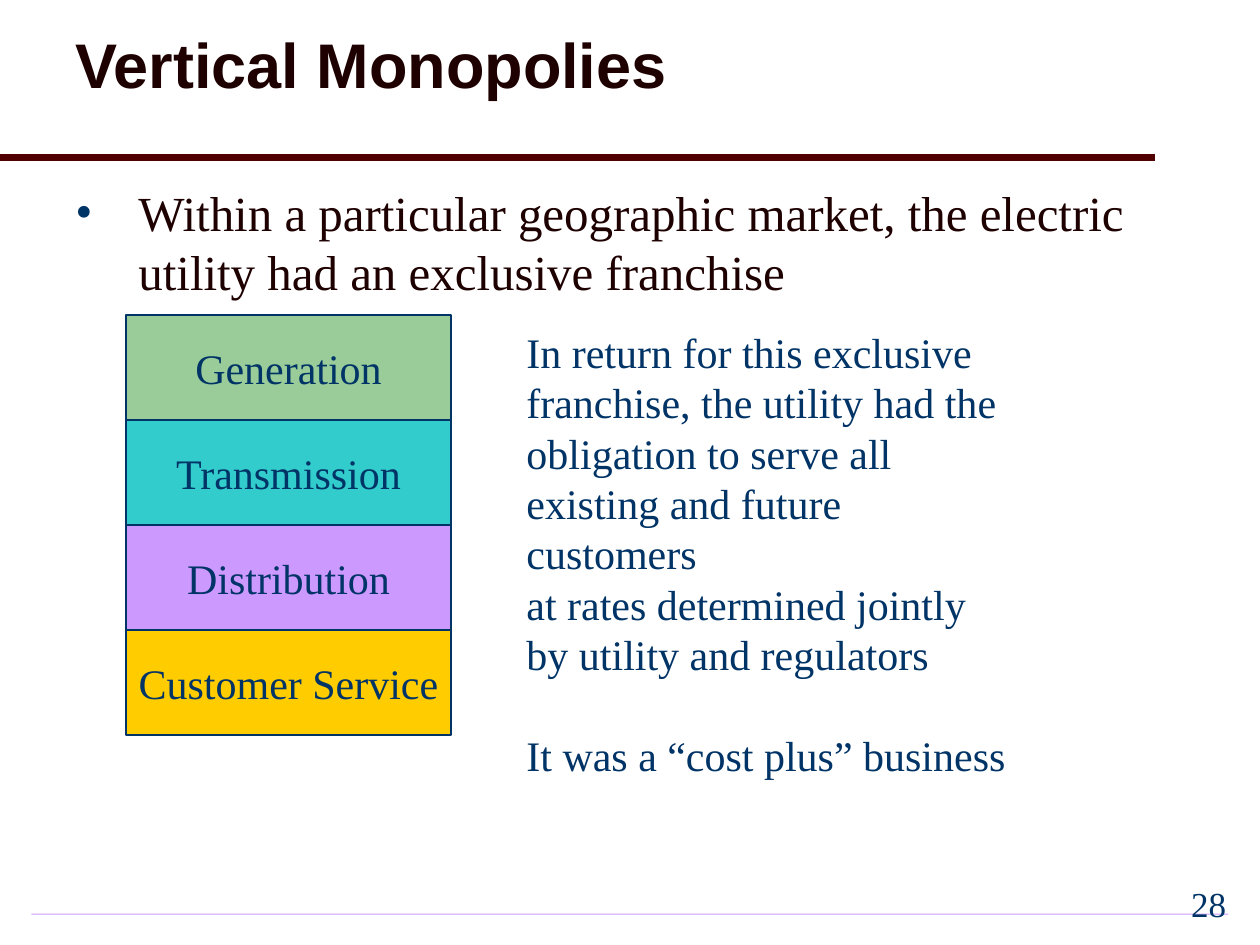
from lxml.etree import SubElement
from pptx import Presentation
from pptx.dml.color import RGBColor
from pptx.enum.shapes import MSO_CONNECTOR, MSO_SHAPE
from pptx.enum.text import MSO_ANCHOR, MSO_AUTO_SIZE, PP_ALIGN
from pptx.oxml.ns import qn
from pptx.util import Inches, Pt

NAVY = RGBColor(0x00, 0x33, 0x66)
DARK = RGBColor(0x1E, 0x00, 0x00)
MAROON = RGBColor(0x50, 0x00, 0x00)
GREEN = RGBColor(0x99, 0xCC, 0x99)
TEAL = RGBColor(0x33, 0xCC, 0xCC)
LILAC = RGBColor(0xCC, 0x99, 0xFF)
GOLD = RGBColor(0xFF, 0xCC, 0x00)

STAGES = [("Generation", GREEN), ("Transmission", TEAL),
          ("Distribution", LILAC), ("Customer Service", GOLD)]
DUTY = ["In return for this exclusive", "franchise, the utility had the",
        "obligation to serve all", "existing and future customers",
        "at rates determined jointly", "by utility and regulators"]
COST = "It was a “cost plus” business"


def write(frame, lines, size=24, color=NAVY, font="Times New Roman", bold=False,
          align=PP_ALIGN.LEFT, anchor=MSO_ANCHOR.TOP, wrap=False, bullet=False):
    """Fill the frame with one paragraph per line and return the last one."""
    frame.word_wrap = wrap
    frame.vertical_anchor = anchor
    for i, line in enumerate(lines):
        para = frame.add_paragraph() if i else frame.paragraphs[0]
        if bullet:
            mark(para)
        para.alignment = align
        run = para.add_run()
        run.text = line
        run.font.name, run.font.size, run.font.bold = font, Pt(size), bold
        run.font.color.rgb = color
    return para


def mark(para):
    """Give the paragraph a navy bullet with a hanging indent."""
    props = para._p.get_or_add_pPr()
    props.set("marL", str(Inches(0.5)))
    props.set("indent", str(-Inches(0.5)))
    SubElement(SubElement(props, qn("a:buClr")), qn("a:srgbClr"), val=str(NAVY))
    SubElement(props, qn("a:buFont"), typeface="Times New Roman")
    SubElement(props, qn("a:buChar"), char="•")


class Page:
    def __init__(self, deck):
        self.slide = deck.slides.add_slide(deck.slide_layouts[6])
        self.shapes = self.slide.shapes

    def text(self, x, y, w, h, lines, **style):
        frame = self.shapes.add_textbox(
            Inches(x), Inches(y), Inches(w), Inches(h)).text_frame
        write(frame, lines, **style)
        return frame

    def rect(self, x, y, w, h, fill, edge=None, group=None):
        shapes = group.shapes if group else self.shapes
        box = shapes.add_shape(MSO_SHAPE.RECTANGLE,
                               Inches(x), Inches(y), Inches(w), Inches(h))
        box.shadow.inherit = False
        box.fill.solid()
        box.fill.fore_color.rgb = fill
        if edge:
            box.line.color.rgb = edge
            box.line.width = Pt(0.75)
        else:
            box.line.fill.background()
        return box

    def rule(self, x, y, end, color, width):
        line = self.shapes.add_connector(MSO_CONNECTOR.STRAIGHT, Inches(x),
                                         Inches(y), Inches(end), Inches(y))
        line.line.color.rgb = color
        line.line.width = Pt(width)
        SubElement(line._element.spPr, qn("a:effectLst"))

    def stack(self, x, y, w, h, items):
        """Pile labelled boxes of height h from y downwards."""
        group = self.shapes.add_group_shape()
        for i, (label, fill) in enumerate(items):
            box = self.rect(x, y + i * h, w, h, fill, NAVY, group)
            write(box.text_frame, [label], align=PP_ALIGN.CENTER,
                  anchor=MSO_ANCHOR.MIDDLE)


def main():
    deck = Presentation()
    deck.slide_width, deck.slide_height = Inches(10), Inches(7.5)
    page = Page(deck)
    page.rect(0.25, 7.25, 9.5, 0.01, LILAC)
    page.rule(0, 1.25, 9.17, MAROON, 4)
    title = page.text(0.5, 0.08, 8.75, 0.92, ["Vertical Monopolies"], size=36,
                      color=DARK, font="Arial", bold=True,
                      anchor=MSO_ANCHOR.MIDDLE, wrap=True)
    title.paragraphs[0].line_spacing = 0.9
    page.text(0.5, 1.4, 8.75, 5.08,
              ["Within a particular geographic market, the electric utility "
               "had an exclusive franchise"],
              size=28, color=DARK, wrap=True, bullet=True)
    page.stack(1, 2.5, 2.58, 2.5 / 3, STAGES)
    terms = page.text(4.08, 2.54, 4.13, 3.3, DUTY + [COST])
    terms.auto_size = MSO_AUTO_SIZE.SHAPE_TO_FIT_TEXT
    terms.paragraphs[-1].space_before = Pt(28.8)
    page.text(7.75, 6.92, 2.08, 0.5, ["28"], size=20, align=PP_ALIGN.RIGHT,
              anchor=MSO_ANCHOR.MIDDLE)
    deck.save("out.pptx")


if __name__ == "__main__":
    main()
